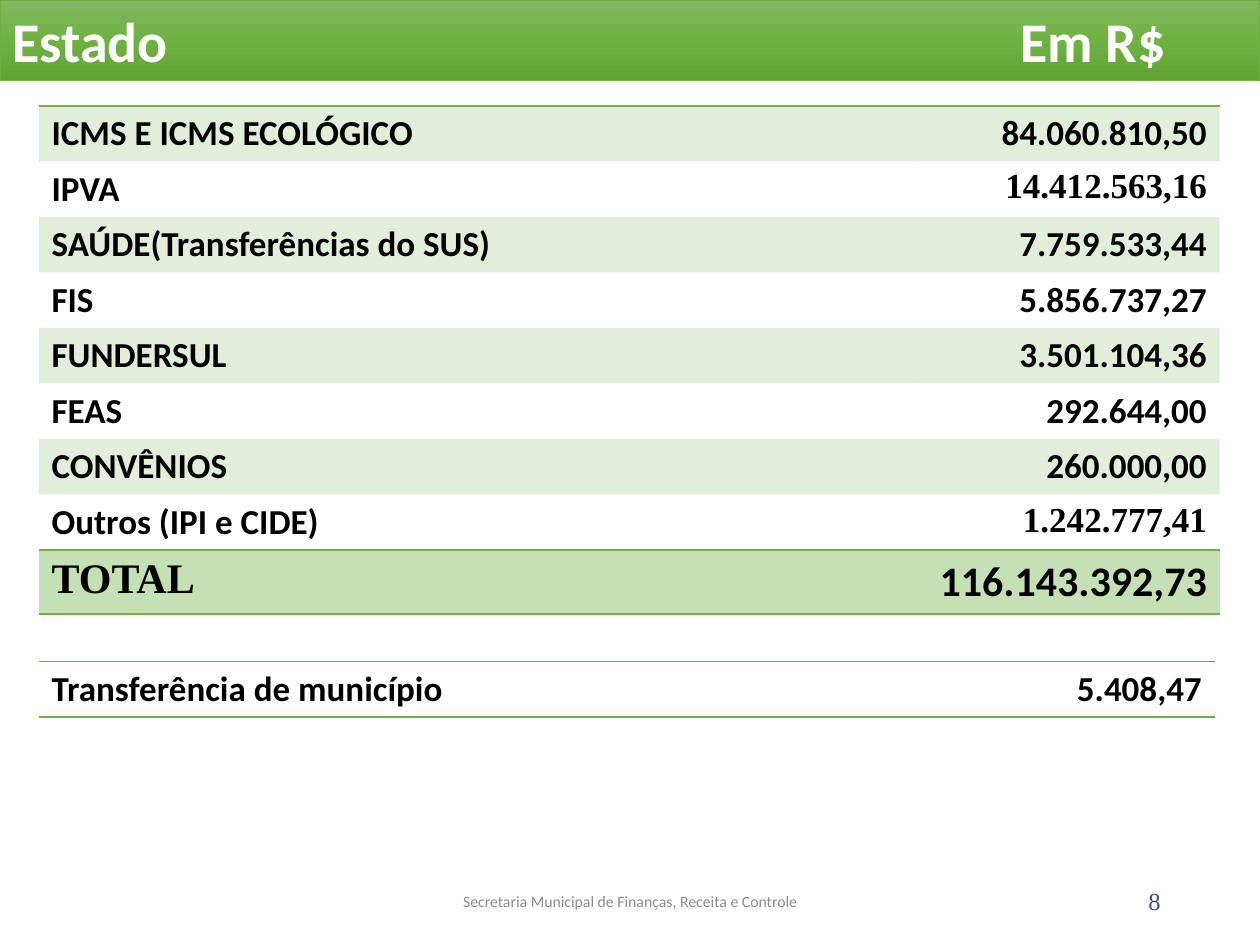
from lxml import etree
from pptx import Presentation
from pptx import util as u
from pptx.dml.color import RGBColor
from pptx.enum import shapes, text
from pptx.oxml.ns import qn

WIDTH, HEIGHT = 10, 7.5
COLORS = {
    "green": "70AD47", "total": "C5E0B4", "white": "FFFFFF", "black": "000000",
    "footer": "8C8C8C", "number": "44546A",
    "top": "81B861", "middle": "6FB242", "bottom": "62A336",
}
SANS, SERIF = "Calibri", "Times New Roman"
PLAIN_TABLE = "{2D5ABB26-0587-4C30-8999-92F81FD0307C}"
LEFT, RIGHT, CENTER = text.PP_ALIGN.LEFT, text.PP_ALIGN.RIGHT, text.PP_ALIGN.CENTER

# Label, value, label font, value font
REVENUES = [
    ("ICMS E ICMS ECOLÓGICO", "84.060.810,50", SANS, SANS),
    ("IPVA", "14.412.563,16", SANS, SERIF),
    ("SAÚDE(Transferências do SUS)", "7.759.533,44", SANS, SANS),
    ("FIS", "5.856.737,27", SANS, SANS),
    ("FUNDERSUL", "3.501.104,36", SANS, SANS),
    ("FEAS", "292.644,00", SANS, SANS),
    ("CONVÊNIOS", "260.000,00", SANS, SANS),
    ("Outros (IPI e CIDE)", "1.242.777,41", SANS, SERIF),
    ("TOTAL", "116.143.392,73", SERIF, SANS),
]
TRANSFERS = [("Transferência de município", "5.408,47", SANS, SANS)]


def rgb(name):
    return RGBColor.from_string(COLORS[name])


def inches(box):
    return [u.Inches(length) for length in box]


def write(frame, words, size=20, font=SANS, color="black", bold=False, align=LEFT, tab=None):
    """Put one formatted paragraph in a text frame, with an optional tab stop in inches."""
    paragraph = frame.paragraphs[0]
    paragraph.text = words
    paragraph.alignment = align
    if tab:
        stops = etree.SubElement(paragraph._p.get_or_add_pPr(), qn("a:tabLst"))
        etree.SubElement(stops, qn("a:tab"), pos=str(u.Inches(tab)), algn="l")
    for run in paragraph.runs:
        run.font.size, run.font.name, run.font.bold = u.Pt(size), font, bold
        run.font.color.rgb = rgb(color)


def add_gradient(shape, names):
    """Fill a shape from top to bottom with evenly spaced colours."""
    shape.fill.gradient()
    gradient = shape._element.spPr.find(qn("a:gradFill"))
    stops = gradient.find(qn("a:gsLst"))
    for stop in list(stops):
        stops.remove(stop)
    for i, name in enumerate(names):
        stop = etree.SubElement(stops, qn("a:gs"), pos=str(100000 * i // (len(names) - 1)))
        etree.SubElement(stop, qn("a:srgbClr"), val=COLORS[name])
    gradient.find(qn("a:lin")).set("ang", "5400000")


def header(slide, box):
    band = slide.shapes.add_shape(shapes.MSO_SHAPE.RECTANGLE, *inches(box))
    band.shadow.inherit = False
    add_gradient(band, ["top", "middle", "bottom"])
    band.line.color.rgb = rgb("green")
    band.line.width = u.Pt(0.5)
    frame = band.text_frame
    frame.word_wrap = True
    frame.vertical_anchor = text.MSO_ANCHOR.MIDDLE
    write(frame, "Estado\tEm R$", size=32, color="white", bold=True, tab=box[2] * 0.8)


def add_border(cell, side):
    properties = cell._tc.get_or_add_tcPr()
    line = etree.Element(qn(f"a:ln{side}"), w=str(u.Pt(1)))
    fill = etree.SubElement(line, qn("a:solidFill"))
    etree.SubElement(fill, qn("a:srgbClr"), val=COLORS["green"])
    properties.insert(len(properties.findall(qn("a:lnT"))), line)


def fill_cell(cell, color, opacity=100):
    cell.fill.solid()
    cell.fill.fore_color.rgb = rgb(color)
    solid = cell._tc.tcPr.find(qn("a:solidFill"))
    etree.SubElement(solid[0], qn("a:alpha"), val=str(opacity * 1000))


def amounts(slide, box, rows, has_total=False):
    """Table of labels and values, with banded rows above an optional total."""
    left, top, width, height = box
    table = slide.shapes.add_table(len(rows), 2, *inches(box)).table
    table._tbl.tblPr.find(qn("a:tableStyleId")).text = PLAIN_TABLE
    table.first_row = table.horz_banding = False
    for column, share in zip(table.columns, (0.744, 0.256)):
        column.width = u.Inches(width * share)
    last = len(rows) - 1
    total_height = 0.5 if has_total else height
    for i, (label, value, label_font, value_font) in enumerate(rows):
        is_total = has_total and i == last
        table.rows[i].height = u.Inches(
            total_height if i == last else (height - total_height) / last)
        entries = ((label, label_font, LEFT), (value, value_font, RIGHT))
        for cell, (words, font, align) in zip(table.rows[i].cells, entries):
            write(cell.text_frame, words, size=24 if is_total else 20,
                  font=font, bold=True, align=align)
            if is_total:
                fill_cell(cell, "total")
            elif has_total and i % 2 == 0:
                fill_cell(cell, "green", opacity=20)
            else:
                cell.fill.background()
            if i == 0 or is_total:
                add_border(cell, "T")
            if i == last:
                add_border(cell, "B")


def footer_text(slide, box, words, **style):
    frame = slide.shapes.add_textbox(*inches(box)).text_frame
    frame.word_wrap = True
    frame.vertical_anchor = text.MSO_ANCHOR.MIDDLE
    write(frame, words, **style)


def footer(slide, box):
    left, top, width, height = box
    footer_text(slide, (left + width * 0.331, top, width * 0.338, height),
                "Secretaria Municipal de Finanças, Receita e Controle",
                size=9, color="footer", align=CENTER)
    footer_text(slide, (left + width * 0.706, top, width * 0.225, height),
                "8", size=14, font=SERIF, color="number", align=RIGHT)


def main():
    deck = Presentation()
    deck.slide_width, deck.slide_height = inches((WIDTH, HEIGHT))
    slide = deck.slides.add_slide(deck.slide_layouts[6])
    margin = 0.31
    header(slide, (0, 0, WIDTH, 0.64))
    amounts(slide, (margin, 0.84, 9.37, 3.97), REVENUES, has_total=True)
    amounts(slide, (margin, 5.25, 9.33, 0.43), TRANSFERS)
    footer(slide, (0, 6.95, WIDTH, 0.4))
    deck.save("out.pptx")


if __name__ == "__main__":
    main()
